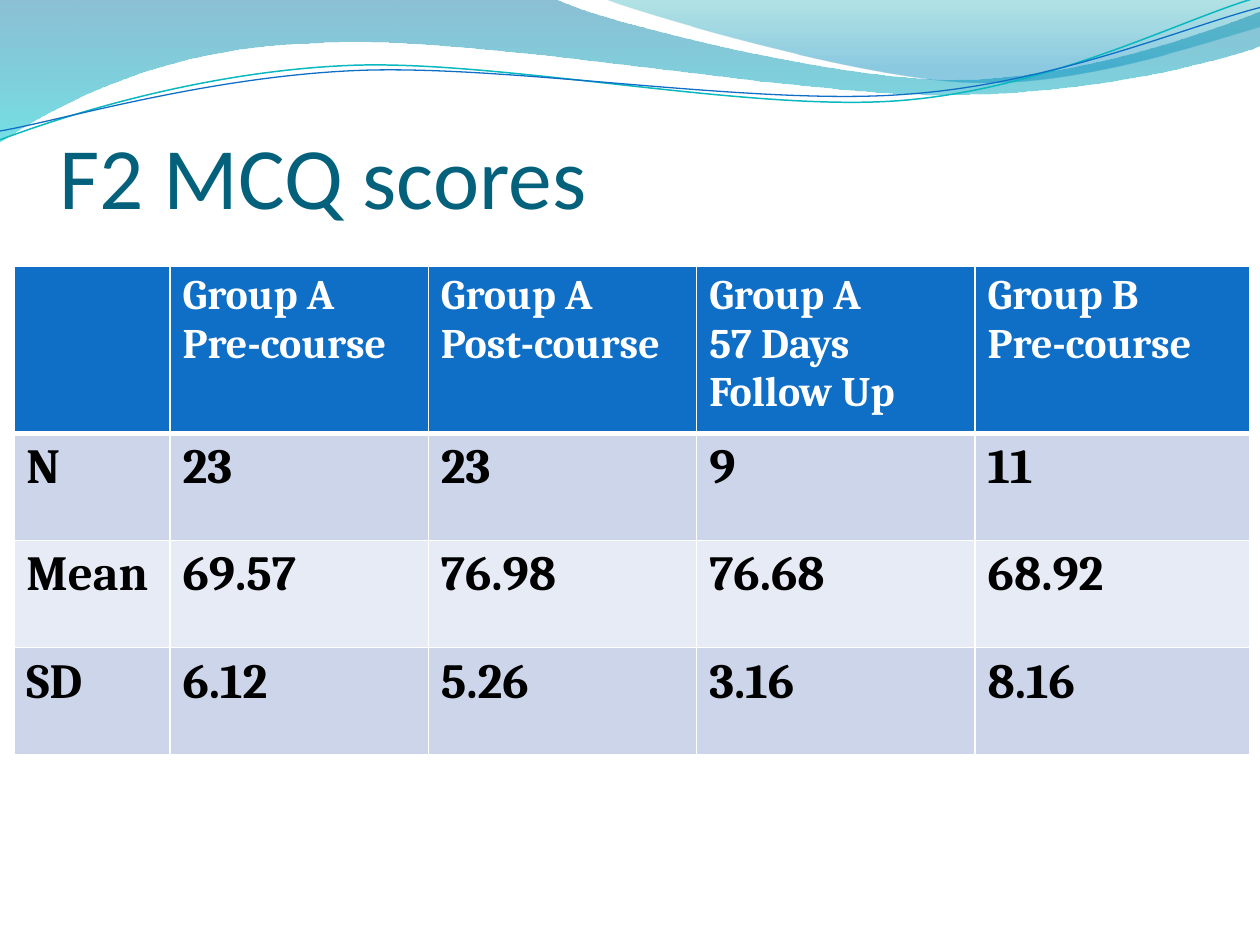
import pptx
import pptx.util
import pptx.dml.color
import pptx.enum.text
import pptx.oxml
import pptx.oxml.ns

WIDTH, HEIGHT = 10, 7.5
COLORS = {
    "title": "04617B", "header": "0F6FC6", "band": "CCD5EA", "plain": "E7EBF5",
    "white": "FFFFFF", "black": "000000", "teal": "0AB8BF", "blue": "0F6FC6",
    "wave_top": "0074A1", "wave_end": "00C6CF",
    "crest_top": "00A1A9", "crest_end": "008BBF",
}
COLUMNS = [1.24, 2.05, 2.13, 2.21, 2.18]
ROWS = [1.33, 0.85, 0.85, 0.85]
SCORES = [
    ["", "Group A\nPre-course", "Group A\nPost-course",
     "Group A\n57 Days Follow Up", "Group B\nPre-course"],
    ["N", "23", "23", "9", "11"],
    ["Mean", "69.57", "76.98", "76.68", "68.92"],
    ["SD", "6.12", "5.26", "3.16", "8.16"],
]
WAVE = [
    (0, 0), (4.4, -0.01),
    (4.76, 0.17, 6.64, 0.63, 7.58, 0.63), (8.53, 0.63, 9.58, 0.26, 10, 0.09),
    (10.01, 0.36),
    (9.83, 0.44, 8.7, 0.76, 7.46, 0.75), (6.22, 0.75, 3.82, 0.28, 2.57, 0.34),
    (1.29, 0.36, 0.46, 0.83, -0.01, 1.13), (0, 0),
]
CREST = [
    (4.79, -0.01),
    (5.09, 0.11, 6.82, 0.62, 7.69, 0.65), (8.56, 0.69, 9.61, 0.32, 10, 0.21),
    (10, 0), (4.79, -0.01),
]
TEAL_LINE = [
    (0, 1.11),
    (0.48, 0.93, 1.58, 0.57, 2.77, 0.52), (3.95, 0.47, 5.93, 0.89, 7.13, 0.8),
    (8.33, 0.71, 9.38, 0.15, 9.98, -0.02),
]
BLUE_LINE = [
    (0, 1.04),
    (0.47, 0.96, 1.64, 0.61, 2.83, 0.56), (4.03, 0.51, 5.97, 0.84, 7.17, 0.75),
    (8.36, 0.67, 9.41, 0.21, 10, 0.06),
]


def rgb(name):
    return pptx.dml.color.RGBColor.from_string(COLORS[name])


def make_element(name, attributes="", content=""):
    space = pptx.oxml.ns.nsdecls("a")
    return pptx.oxml.parse_xml(f"<a:{name} {space} {attributes}>{content}</a:{name}>")


def bend_segments(shape, outline):
    lines = list(shape.element.spPr.iter(pptx.oxml.ns.qn("a:lnTo")))
    for line, segment in zip(lines, outline[1:]):
        if len(segment) == 2:
            continue
        points = "".join(
            f'<a:pt x="{pptx.util.Inches(x) - shape.left}" y="{pptx.util.Inches(y) - shape.top}"/>'
            for x, y in zip(segment[::2], segment[1::2]))
        line.getparent().replace(line, make_element("cubicBezTo", content=points))


def add_outline(page, outline, close):
    anchors = [tuple(map(pptx.util.Inches, segment[-2:])) for segment in outline]
    builder = page.shapes.build_freeform(*anchors[0])
    builder.add_line_segments(anchors[1:], close=close)
    shape = builder.convert_to_shape()
    bend_segments(shape, outline)
    shape.shadow.inherit = False
    return shape


def add_wave(page, outline, stops):
    shape = add_outline(page, outline, True)
    shape.line.fill.background()
    shape.fill.gradient()
    shape.fill.gradient_angle = 270
    for stop, (position, color, _) in zip(shape.fill.gradient_stops, stops):
        stop.position = position
        stop.color.rgb = rgb(color)
    tag = pptx.oxml.ns.qn("a:srgbClr")
    for element, (_, _, opacity) in zip(shape.element.spPr.iter(tag), stops):
        element.append(make_element("alpha", f'val="{opacity * 1000}"'))


def add_curve(page, outline, color, weight):
    shape = add_outline(page, outline, False)
    shape.fill.background()
    shape.line.color.rgb = rgb(color)
    shape.line.width = pptx.util.Pt(weight)


def style_text(frame, font, size, color, bold=False):
    for para in frame.paragraphs:
        para.font.name = font
        para.font.size = pptx.util.Pt(size)
        para.font.bold = bold
        para.font.color.rgb = rgb(color)


def add_title(page, text):
    box = page.shapes.add_textbox(*map(pptx.util.Inches, (0.47, 0.55, 0.9 * WIDTH, 1.25)))
    frame = box.text_frame
    frame.word_wrap = True
    frame.vertical_anchor = pptx.enum.text.MSO_ANCHOR.BOTTOM
    frame.margin_left = frame.margin_right = frame.margin_bottom = 0
    frame.text = text
    style_text(frame, "Calibri", 50, "title")


def set_borders(cell, weights):
    properties = cell._tc.get_or_add_tcPr()
    color = f'<a:solidFill><a:srgbClr val="{COLORS["white"]}"/></a:solidFill>'
    for index, (side, weight) in enumerate(weights.items()):
        border = make_element(f"ln{side}", f'w="{pptx.util.Pt(weight)}"', color)
        properties.insert(index, border)


def add_scores(page):
    bounds = map(pptx.util.Inches, (0.11, 2.11, sum(COLUMNS), sum(ROWS)))
    table = page.shapes.add_table(len(ROWS), len(COLUMNS), *bounds).table
    for column, width in zip(table.columns, COLUMNS):
        column.width = pptx.util.Inches(width)
    for row, height in zip(table.rows, ROWS):
        row.height = pptx.util.Inches(height)
    for row, values in enumerate(SCORES):
        fill = "header" if row == 0 else "band" if row % 2 else "plain"
        size, color = (24, "white") if row == 0 else (28, "black")
        for column, value in enumerate(values):
            cell = table.cell(row, column)
            cell.text_frame.text = value
            style_text(cell.text_frame, "Cambria", size, color, True)
            cell.fill.solid()
            cell.fill.fore_color.rgb = rgb(fill)
            set_borders(cell, {"L": 1, "R": 1, "T": 3 if row == 1 else 1,
                               "B": 3 if row == 0 else 1})


def main():
    deck = pptx.Presentation()
    deck.slide_width = pptx.util.Inches(WIDTH)
    deck.slide_height = pptx.util.Inches(HEIGHT)
    page = deck.slides.add_slide(deck.slide_layouts[6])
    add_wave(page, WAVE, [(0, "wave_top", 45), (1, "wave_end", 55)])
    add_wave(page, CREST, [(0, "crest_top", 30), (0.8, "crest_end", 45)])
    add_curve(page, TEAL_LINE, "teal", 0.85)
    add_curve(page, BLUE_LINE, "blue", 0.75)
    add_title(page, "F2 MCQ scores")
    add_scores(page)
    deck.save("out.pptx")


if __name__ == "__main__":
    main()
